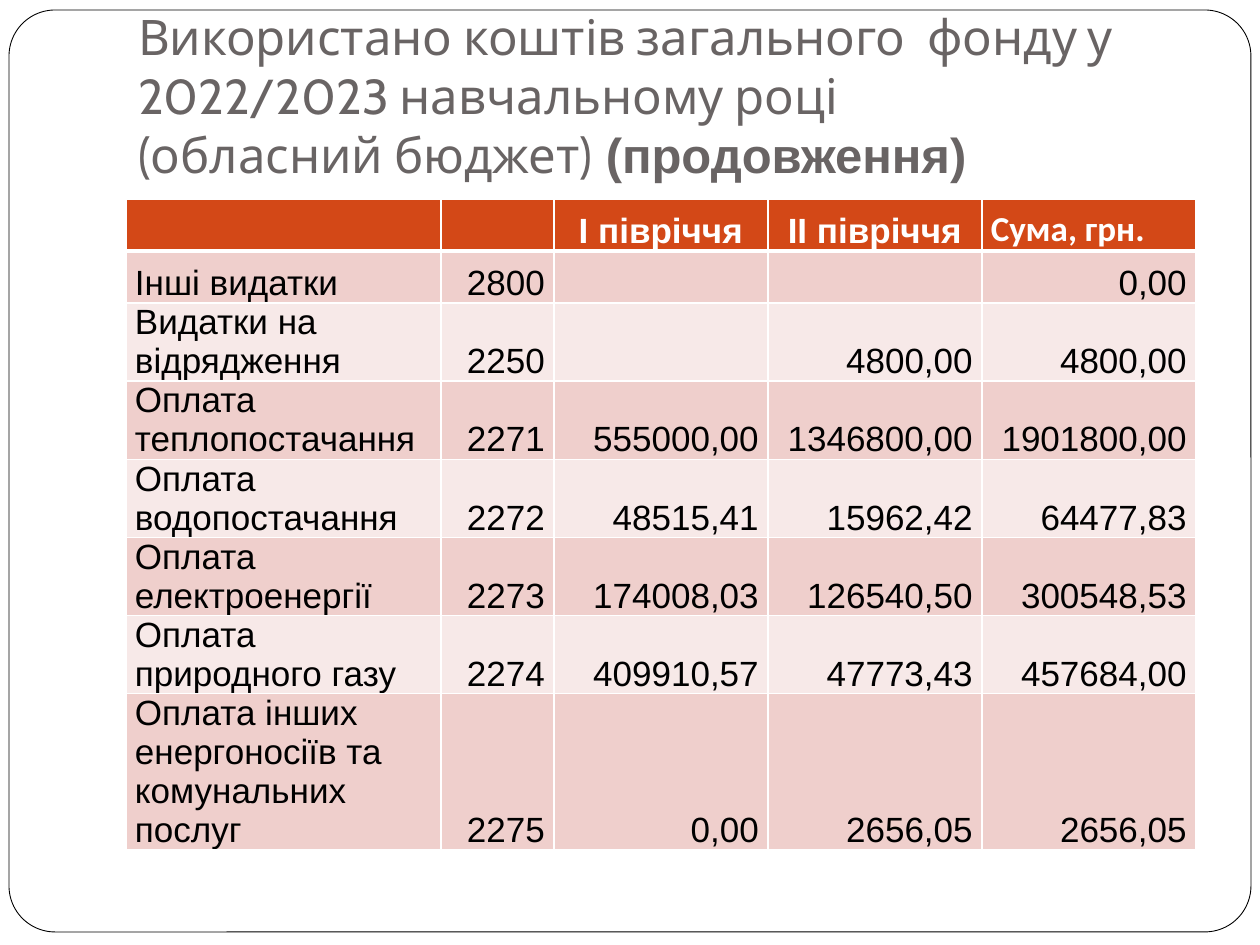
import pptx
import pptx.dml.color
import pptx.enum.shapes
import pptx.enum.text
import pptx.oxml
import pptx.oxml.ns
import pptx.util

PX = 914400 // 126
COLORS = {
    "white": "FFFFFF", "black": "000000", "title": "696464",
    "header": "D34817", "odd": "EFCFCC", "even": "F7E9E8",
}
COLUMN_WIDTHS = [315, 113, 214, 214, 214]
ROW_HEIGHT = 52
ROWS = [
    ["", "", "І півріччя", "ІІ півріччя", "Сума, грн."],
    ["Інші видатки", "2800", "", "", "0,00"],
    ["Видатки на відрядження", "2250", "", "4800,00", "4800,00"],
    ["Оплата теплопостачання", "2271", "555000,00", "1346800,00", "1901800,00"],
    ["Оплата водопостачання", "2272", "48515,41", "15962,42", "64477,83"],
    ["Оплата електроенергії", "2273", "174008,03", "126540,50", "300548,53"],
    ["Оплата природного газу", "2274", "409910,57", "47773,43", "457684,00"],
    ["Оплата інших енергоносіїв та комунальних послуг", "2275",
     "0,00", "2656,05", "2656,05"],
]
ALIGN = pptx.enum.text.PP_ALIGN


def px(*lengths):
    return [length * PX for length in lengths]


def color(name):
    return pptx.dml.color.RGBColor.from_string(COLORS[name])


def format_run(run, size, font, color_name, bold=False):
    run.font.size = pptx.util.Pt(size)
    run.font.name = font
    run.font.bold = bold
    run.font.color.rgb = color(color_name)


def set_insets(frame, left, top, right, bottom):
    """Set the inner margins of a text frame or a table cell, in px."""
    frame.margin_left, frame.margin_top, frame.margin_right, frame.margin_bottom = px(
        left, top, right, bottom)


def add_page_frame(page):
    frame = page.shapes.add_shape(
        pptx.enum.shapes.MSO_SHAPE.ROUNDED_RECTANGLE, *px(9, 10, 1242, 922))
    frame.adjustments[0] = 0.05
    frame.shadow.inherit = False
    frame.fill.solid()
    frame.fill.fore_color.rgb = color("white")
    frame.line.color.rgb = color("black")
    frame.line.width = pptx.util.Pt(0.5)
    tree = page.shapes._spTree
    tree.insert(2, frame._element)  # behind the title


def set_title(page):
    title = page.shapes.title
    title.left, title.top, title.width, title.height = px(126, 38, 1071, 157)
    frame = title.text_frame
    frame.word_wrap = True
    frame.auto_size = pptx.enum.text.MSO_AUTO_SIZE.NONE
    frame.vertical_anchor = pptx.enum.text.MSO_ANCHOR.BOTTOM
    set_insets(frame, 12, 6, 12, 12)
    para = frame.paragraphs[0]
    para.text = ("Використано коштів загального  фонду у 2022/2023 "
                 "навчальному році \v(обласний бюджет)")
    para.alignment = ALIGN.LEFT
    for run in para.runs:
        format_run(run, 28, "Cabin", "title")
    ending = para.add_run()
    ending.text = " (продовження)"
    format_run(ending, 28, "Arial", "title", bold=True)


def set_borders(cell, bottom_width):
    properties = cell._tc.get_or_add_tcPr()
    widths = {"lnL": 1, "lnR": 1, "lnT": 1, "lnB": bottom_width}
    for position, (side, width) in enumerate(widths.items()):
        properties.insert(position, pptx.oxml.parse_xml(
            f'<a:{side} {pptx.oxml.ns.nsdecls("a")} w="{pptx.util.Pt(width)}">'
            f'<a:solidFill><a:srgbClr val="{COLORS["white"]}"/></a:solidFill></a:{side}>'))


def cell_alignment(is_header, column):
    if is_header:
        return ALIGN.LEFT if column == 4 else ALIGN.CENTER
    return ALIGN.LEFT if column == 0 else ALIGN.RIGHT


def fill_cell(cell, text, row, column):
    is_header = row == 0
    cell.fill.solid()
    cell.fill.fore_color.rgb = color(
        "header" if is_header else "odd" if row % 2 else "even")
    set_borders(cell, 3 if is_header else 1)
    cell.vertical_anchor = pptx.enum.text.MSO_ANCHOR.BOTTOM
    set_insets(cell, 9, 0, 9, 0)
    if not text:
        return
    para = cell.text_frame.paragraphs[0]
    para.text = text
    para.alignment = cell_alignment(is_header, column)
    font = "Calibri" if is_header and column == 4 else "Arial"
    format_run(para.runs[0], 20, font, "white" if is_header else "black", is_header)


def add_expense_table(page):
    table = page.shapes.add_table(
        len(ROWS), len(COLUMN_WIDTHS),
        *px(126, 199, sum(COLUMN_WIDTHS), ROW_HEIGHT * len(ROWS))).table
    for column, width in zip(table.columns, COLUMN_WIDTHS):
        column.width = width * PX
    for row, texts in enumerate(ROWS):
        for column, text in enumerate(texts):
            fill_cell(table.cell(row, column), text, row, column)


def main():
    deck = pptx.Presentation()
    deck.slide_width, deck.slide_height = px(1260, 945)
    page = deck.slides.add_slide(deck.slide_layouts.get_by_name("Title Only"))
    add_page_frame(page)
    set_title(page)
    add_expense_table(page)
    deck.save("out.pptx")


if __name__ == "__main__":
    main()
